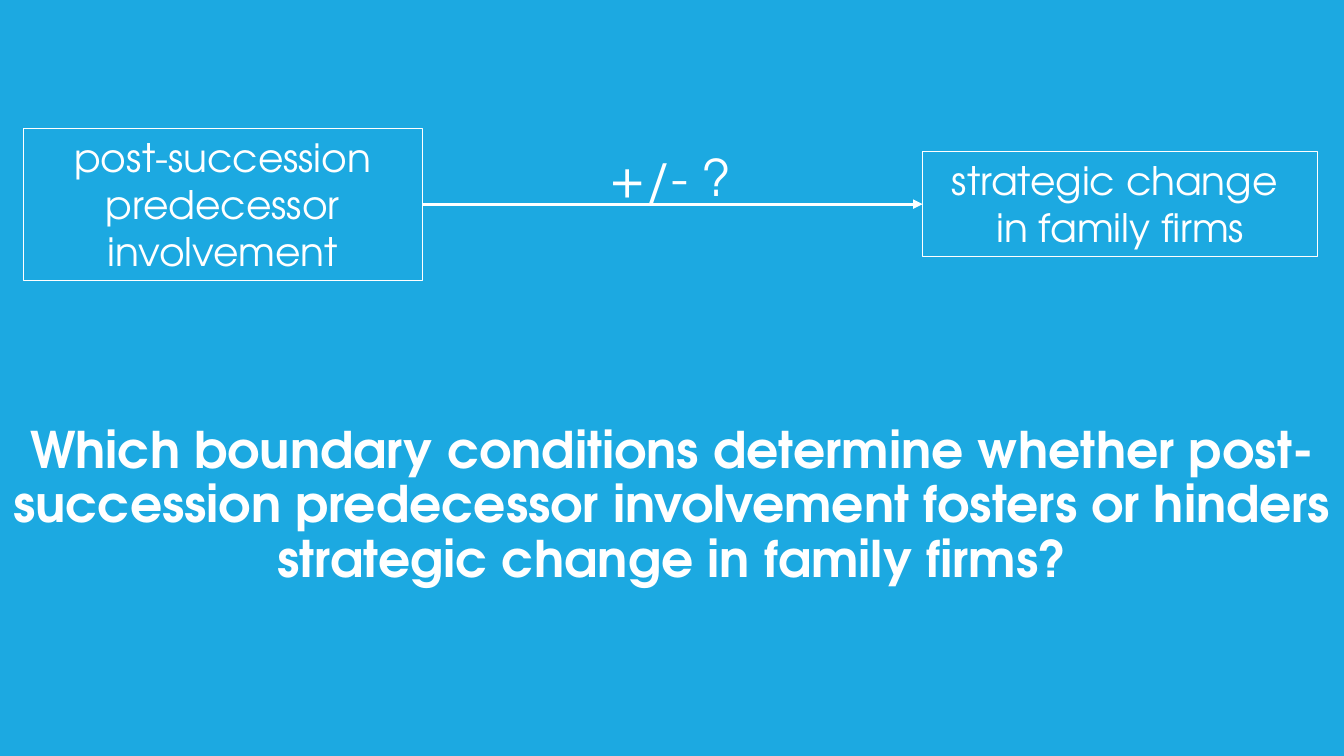
from pptx import Presentation
from pptx.dml.color import RGBColor
from pptx.enum.shapes import MSO_CONNECTOR, MSO_SHAPE
from pptx.enum.text import MSO_ANCHOR, PP_ALIGN
from pptx.oxml import parse_xml
from pptx.oxml.ns import nsdecls
from pptx.util import Inches, Pt

CAUSE = ["post-succession predecessor involvement"]
EFFECT = ["strategic change ", "in family firms"]
SIGN = ["+/- ?"]
ASK = ["Which boundary conditions determine whether post-succession "
       "predecessor involvement fosters or hinders strategic change "
       "in family firms?"]

FONT = "TeX Gyre Adventor"
HUES = {"back": "1CA9E1", "ink": "FFFFFF"}
WIDE, HIGH = 13.33, 7.5
AXIS = 0.27 * HIGH
LEFT, RIGHT = (0.23, 3.96), (9.15, 3.92)
START, END = sum(LEFT), RIGHT[0]


def hue(name):
    return RGBColor.from_string(HUES[name])


def put(slide, lines, x, y, w, h, size, fill=None, edge=False,
        bold=False, gap=None, anchor=MSO_ANCHOR.TOP):
    box = slide.shapes.add_shape(
        MSO_SHAPE.RECTANGLE, *map(Inches, (x, y, w, h)))
    box.shadow.inherit = False
    if fill:
        box.fill.solid()
        box.fill.fore_color.rgb = hue(fill)
    else:
        box.fill.background()
    if edge:
        box.line.color.rgb = hue("ink")
        box.line.width = Pt(0.75)
    else:
        box.line.fill.background()
    frame = box.text_frame
    frame.word_wrap = True
    frame.vertical_anchor = anchor
    para = frame.paragraphs[0]
    para.alignment = PP_ALIGN.CENTER
    if gap:
        para.line_spacing = gap
    for i, line in enumerate(lines):
        if i:
            para.add_line_break()
        run = para.add_run()
        run.text = line
        run.font.name = FONT
        run.font.size = Pt(size)
        run.font.bold = bold
        run.font.color.rgb = hue("ink")


def link(slide, x1, x2, y):
    arrow = slide.shapes.add_connector(
        MSO_CONNECTOR.STRAIGHT, *map(Inches, (x1, y, x2, y)))
    arrow.line.color.rgb = hue("ink")
    arrow.line.width = Pt(2.25)
    arrow.line._get_or_add_ln().append(
        parse_xml(f'<a:tailEnd {nsdecls("a")} type="triangle"/>'))
    arrow._element.spPr.append(parse_xml(f'<a:effectLst {nsdecls("a")}/>'))


def main():
    deck = Presentation()
    deck.slide_width, deck.slide_height = Inches(WIDE), Inches(HIGH)
    slide = deck.slides.add_slide(deck.slide_layouts[6])
    slide.background.fill.solid()
    slide.background.fill.fore_color.rgb = hue("back")
    for lines, (x, w), h in ((CAUSE, LEFT, 1.51), (EFFECT, RIGHT, 1.04)):
        put(slide, lines, x, AXIS - h / 2, w, h, 28, edge=True)
    link(slide, START, END, AXIS)
    put(slide, SIGN, START - 0.04, 1.4, 5, 0.71, 36)
    put(slide, ASK, 0, 0.45 * HIGH, WIDE, 0.44 * HIGH, 36, fill="back",
        bold=True, gap=0.9, anchor=MSO_ANCHOR.MIDDLE)
    deck.save("out.pptx")


if __name__ == "__main__":
    main()
